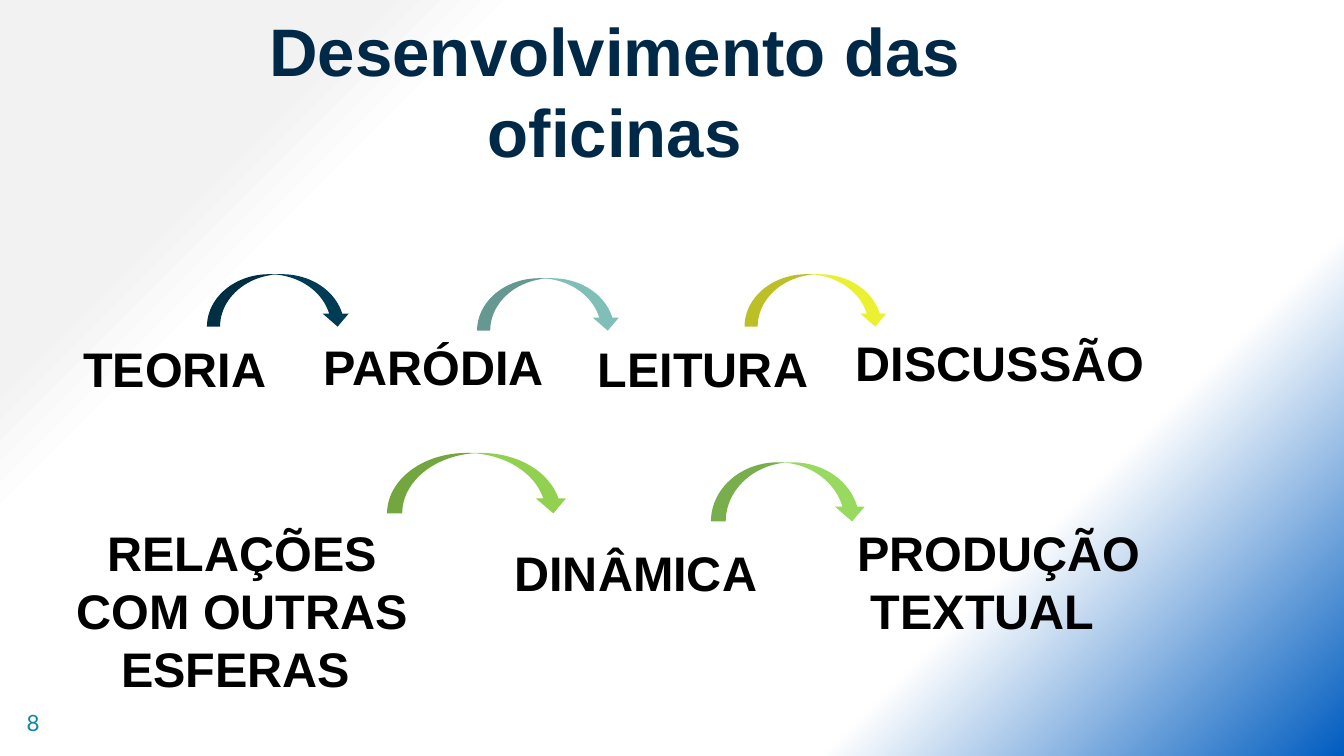
from dataclasses import dataclass

from lxml import etree
from pptx import Presentation
from pptx.dml.color import RGBColor
from pptx.enum.shapes import MSO_SHAPE
from pptx.enum.text import MSO_ANCHOR, PP_ALIGN
from pptx.oxml.ns import qn
from pptx.util import Inches, Pt

CURVED_ARROW = MSO_SHAPE.CURVED_DOWN_ARROW
BOTTOM, MIDDLE, TOP = MSO_ANCHOR.BOTTOM, MSO_ANCHOR.MIDDLE, MSO_ANCHOR.TOP
LEFT, CENTER = PP_ALIGN.LEFT, PP_ALIGN.CENTER


@dataclass(frozen=True)
class TextStyle:
    font: str
    size: int
    color: str
    bold: bool = True


@dataclass(frozen=True)
class Theme:
    title: TextStyle = TextStyle("Arial", 36, "002948")
    step: TextStyle = TextStyle("Arial", 26, "000000")
    number: TextStyle = TextStyle("Lato", 12, "0B87A1", False)
    # Gradient stops: percent, colour
    background: tuple = ((18, "F2F2F2"), (25, "FFFFFF"), (75, "FFFFFF"), (100, "005CBF"))
    background_angle: int = 45


@dataclass(frozen=True)
class Box:
    left: float
    top: float
    width: float
    height: float

    def lengths(self) -> tuple:
        return tuple(Inches(v) for v in (self.left, self.top, self.width, self.height))


@dataclass(frozen=True)
class Step:
    text: str
    box: Box
    align: PP_ALIGN = LEFT


@dataclass(frozen=True)
class Arrow:
    box: Box
    color: str


THEME = Theme()

STEPS = (
    Step("TEORIA", Box(0.52, 2.47, 1.79, 0.54)),
    Step("PARÓDIA", Box(2.31, 2.46, 1.85, 0.54)),
    Step("LEITURA", Box(4.35, 2.47, 1.87, 0.54)),
    Step("DISCUSSÃO", Box(6.27, 2.43, 2.47, 0.54)),
    Step("RELAÇÕES COM OUTRAS ESFERAS ", Box(0.4, 3.84, 2.81, 1.41), CENTER),
    Step("DINÂMICA", Box(3.73, 3.99, 2.14, 0.54)),
    Step("PRODUÇÃO\n TEXTUAL", Box(6.28, 3.84, 3.52, 0.98)),
)

ARROWS = (
    Arrow(Box(1.54, 2.04, 1.07, 0.39), "003B55"),
    Arrow(Box(3.55, 2.07, 1.07, 0.39), "80BFB7"),
    Arrow(Box(5.54, 2.04, 1.07, 0.39), "EBF030"),
    Arrow(Box(2.88, 3.37, 1.35, 0.45), "92D050"),
    Arrow(Box(5.29, 3.44, 1.16, 0.44), "97DA5F"),
)


def paint_background(slide) -> None:
    """Fill the background with the theme's diagonal gradient."""
    slide.background.fill.gradient()
    gradient = slide.element.find(".//" + qn("a:gradFill"))
    stops = gradient.find(qn("a:gsLst"))
    for stop in list(stops):
        stops.remove(stop)
    for percent, color in THEME.background:
        stop = etree.SubElement(stops, qn("a:gs"), pos=str(percent * 1000))
        etree.SubElement(stop, qn("a:srgbClr"), val=color)
    direction = gradient.find(qn("a:lin"))
    direction.set("ang", str(THEME.background_angle * 60000))
    direction.set("scaled", "0")


def write_text(shape, text: str, style: TextStyle, align: PP_ALIGN = LEFT,
               anchor: MSO_ANCHOR = TOP) -> None:
    text_frame = shape.text_frame
    text_frame.text = text
    text_frame.word_wrap = True
    text_frame.vertical_anchor = anchor
    for paragraph in text_frame.paragraphs:
        paragraph.alignment = align
        for run in paragraph.runs:
            run.font.name = style.font
            run.font.size = Pt(style.size)
            run.font.bold = style.bold
            run.font.color.rgb = RGBColor.from_string(style.color)


def set_margins(shape, margin: float) -> None:
    text_frame = shape.text_frame
    text_frame.margin_left = text_frame.margin_right = Inches(margin)
    text_frame.margin_top = text_frame.margin_bottom = Inches(margin)


def add_title(slide, text: str, box: Box) -> None:
    title = slide.shapes.title
    title.left, title.top, title.width, title.height = box.lengths()
    write_text(title, text, THEME.title, CENTER, BOTTOM)
    set_margins(title, 0.1)


def add_step(slide, step: Step) -> None:
    write_text(slide.shapes.add_textbox(*step.box.lengths()), step.text, THEME.step, step.align)


def add_arrow(slide, arrow: Arrow) -> None:
    shape = slide.shapes.add_shape(CURVED_ARROW, *arrow.box.lengths())
    shape.shadow.inherit = False
    shape.fill.solid()
    shape.fill.fore_color.rgb = RGBColor.from_string(arrow.color)
    shape.line.fill.background()


def add_slide_number(slide, number: str, box: Box) -> None:
    shape = slide.shapes.add_textbox(*box.lengths())
    write_text(shape, number, THEME.number, anchor=MIDDLE)
    set_margins(shape, 0.1)


def main() -> None:
    presentation = Presentation()
    # Widescreen, 16:9
    presentation.slide_width = Inches(10)
    presentation.slide_height = Inches(10 * 9 / 16)
    title_only = presentation.slide_layouts[5]
    slide = presentation.slides.add_slide(title_only)

    paint_background(slide)
    add_title(slide, "Desenvolvimento das oficinas", Box(1.56, 0.43, 6.03, 0.94))
    add_slide_number(slide, "8", Box(0.1, 5.16, 0.6, 0.43))

    # Workshop stages and the arrows that lead from one to the next
    for step in STEPS:
        add_step(slide, step)
    for arrow in ARROWS:
        add_arrow(slide, arrow)

    presentation.save("out.pptx")


if __name__ == "__main__":
    main()
